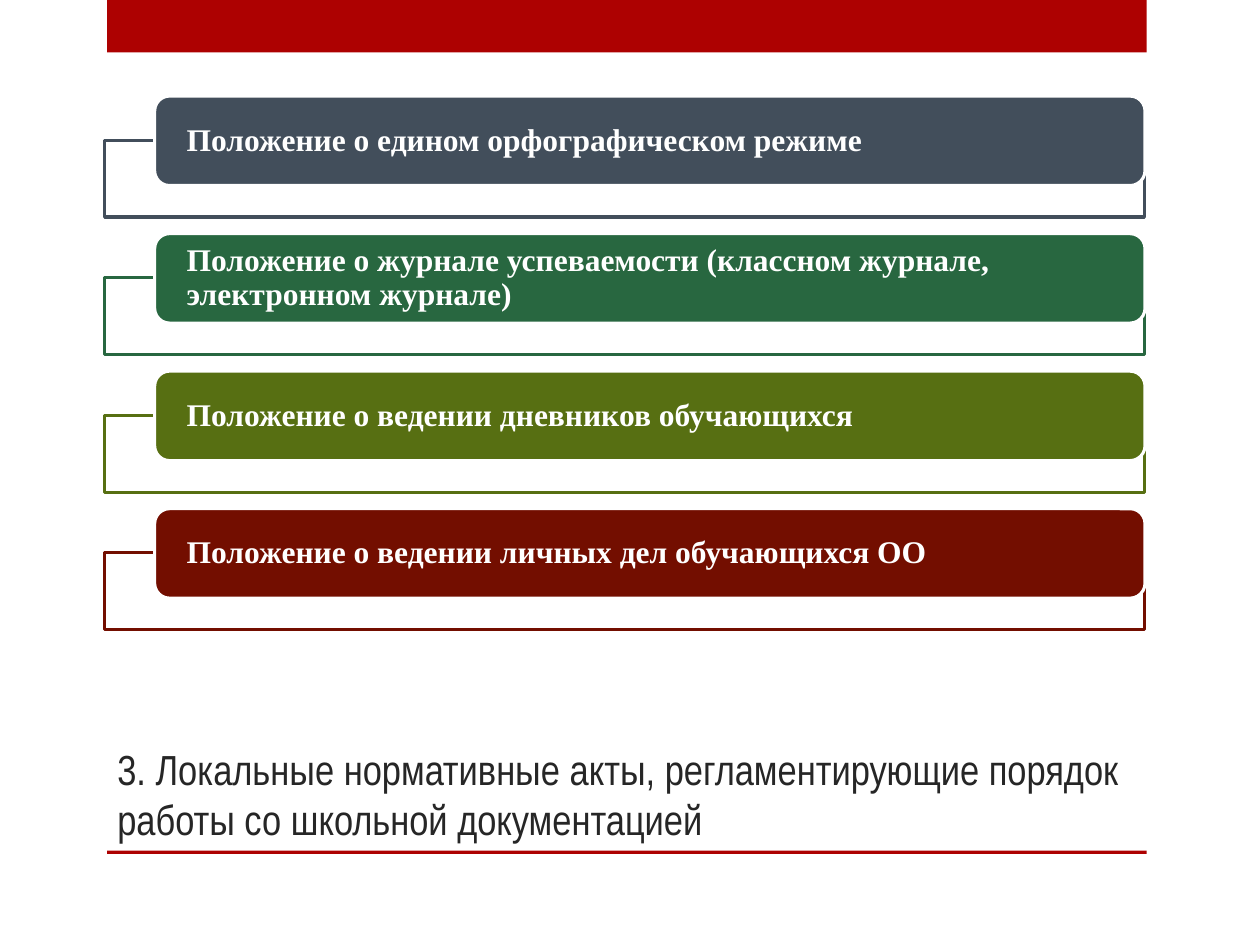
from dataclasses import dataclass

from pptx import Presentation
from pptx.dml.color import RGBColor
from pptx.enum.shapes import MSO_SHAPE
from pptx.enum.text import MSO_ANCHOR, MSO_AUTO_SIZE, PP_ALIGN
from pptx.oxml.ns import qn
from pptx.shapes.autoshape import Shape
from pptx.slide import Slide
from pptx.text.text import TextFrame
from pptx.util import Pt
from lxml.etree import SubElement

RED = RGBColor(0xAD, 0x01, 0x01)
WHITE = RGBColor(0xFF, 0xFF, 0xFF)
INK = RGBColor(0x26, 0x26, 0x26)
SLATE = RGBColor(0x42, 0x4E, 0x5B)
GREEN = RGBColor(0x28, 0x67, 0x40)
OLIVE = RGBColor(0x57, 0x6F, 0x12)
MAROON = RGBColor(0x73, 0x0E, 0x00)

TOP = 54.9
STEP = 78.6
DROP = 25.2


@dataclass(frozen=True)
class Box:
    left: float
    top: float
    width: float
    height: float


@dataclass(frozen=True)
class Item:
    text: str
    color: RGBColor


ITEMS = [
    Item("Положение о едином орфографическом режиме", SLATE),
    Item("Положение о журнале успеваемости (классном журнале, электронном журнале)", GREEN),
    Item("Положение о ведении дневников обучающихся", OLIVE),
    Item("Положение о ведении личных дел обучающихся ОО", MAROON),
]


def add_box(slide: Slide, kind: MSO_SHAPE, box: Box, fill: RGBColor,
            line: RGBColor | None = None) -> Shape:
    shape = slide.shapes.add_shape(
        kind, Pt(box.left), Pt(box.top), Pt(box.width), Pt(box.height))
    shape.shadow.inherit = False
    shape.fill.solid()
    shape.fill.fore_color.rgb = fill
    if line is None:
        shape.line.fill.background()
    else:
        shape.line.color.rgb = line
        shape.line.width = Pt(1.75)
    return shape


def write(frame: TextFrame, text: str, font: str, size: float,
          color: RGBColor, bold: bool = False) -> None:
    frame.word_wrap = True
    frame.auto_size = MSO_AUTO_SIZE.NONE
    para = frame.paragraphs[0]
    para.alignment = PP_ALIGN.LEFT
    run = para.add_run()
    run.text = text
    run.font.name = font
    run.font.size = Pt(size)
    run.font.bold = bold
    run.font.color.rgb = color


def add_item(slide: Slide, item: Item, top: float) -> None:
    back = add_box(slide, MSO_SHAPE.RECTANGLE,
                   Box(59.8, top + DROP, 594.2, 43.9), WHITE, item.color)
    tint = back.fill._xPr.find(qn("a:solidFill"))[0]
    SubElement(tint, qn("a:alpha"), val="90000")
    card = add_box(slide, MSO_SHAPE.ROUNDED_RECTANGLE,
                   Box(88.4, top, 565.9, 51.1), item.color, WHITE)
    frame = card.text_frame
    frame.margin_left = frame.margin_right = Pt(15.8)
    frame.margin_top = frame.margin_bottom = Pt(0)
    frame.vertical_anchor = MSO_ANCHOR.MIDDLE
    write(frame, item.text, "Times New Roman", 18, WHITE, True)
    frame.paragraphs[0].line_spacing = 0.9


def add_title(slide: Slide, text: str) -> None:
    title = slide.shapes.title
    title.left, title.top = Pt(59.8), Pt(360)
    title.width, title.height = Pt(623.5), Pt(126)
    title.text_frame.vertical_anchor = MSO_ANCHOR.BOTTOM
    write(title.text_frame, text, "Arial Narrow", 24, INK)


def main() -> None:
    deck = Presentation()
    deck.slide_width, deck.slide_height = Pt(720), Pt(540)
    slide = deck.slides.add_slide(deck.slide_layouts[5])
    for top, height in ((0, 30), (486, 2)):
        add_box(slide, MSO_SHAPE.RECTANGLE, Box(61.2, top, 594, height), RED)
    add_title(slide, "3. Локальные нормативные акты, регламентирующие "
                     "порядок работы со школьной документацией")
    for row, item in enumerate(ITEMS):
        add_item(slide, item, TOP + row * STEP)
    deck.save("out.pptx")


if __name__ == "__main__":
    main()
